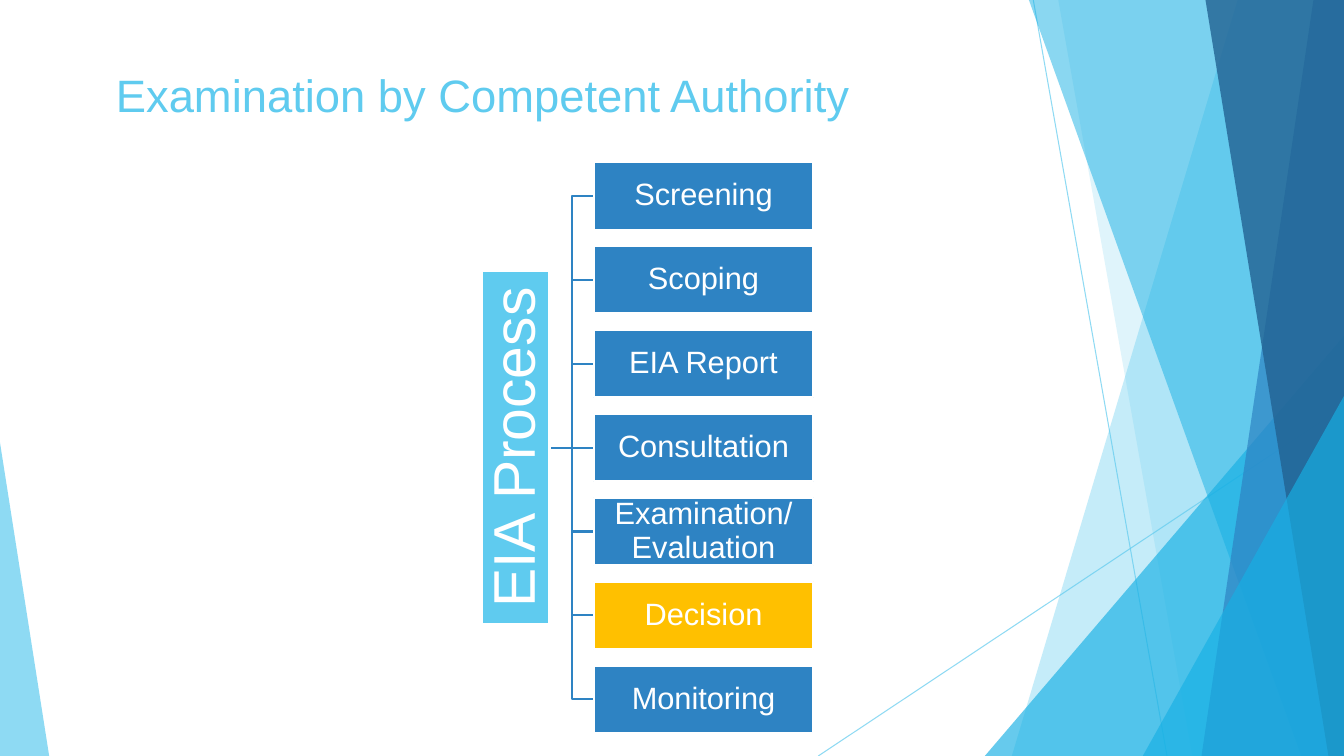
import pptx
import pptx.dml.color
import pptx.enum.shapes
import pptx.enum.text
import pptx.oxml.ns
import pptx.util
from lxml import etree

Cm = pptx.util.Cm
SHAPES = pptx.enum.shapes.MSO_SHAPE
CONNECTORS = pptx.enum.shapes.MSO_CONNECTOR
qn = pptx.oxml.ns.qn

WIDTH, HEIGHT = 33.87, 19.05
SKY, CYAN, BLUE, NAVY = "5FCBEF", "17B0E4", "2E83C3", "226292"
WHITE, AMBER = "FFFFFF", "FFC000"
STEPS = ["Screening", "Scoping", "EIA Report", "Consultation",
         "Examination/ Evaluation", "Decision", "Monitoring"]
CURRENT_STEP = "Decision"


def color(hex_value):
    return pptx.dml.color.RGBColor.from_string(hex_value)


def set_opacity(shape, percent):
    for tint in shape.element.spPr.iter(qn("a:srgbClr")):
        etree.SubElement(tint, qn("a:alpha"), val=str(percent * 1000))


def paint(shape, fill, opacity=100, outline=None):
    shape.shadow.inherit = False
    shape.fill.solid()
    shape.fill.fore_color.rgb = color(fill)
    if outline:
        shape.line.color.rgb = color(outline)
        shape.line.width = pptx.util.Pt(1.5)
    else:
        shape.line.fill.background()
    if opacity < 100:
        set_opacity(shape, opacity)


def write(frame, text, size, tint=WHITE, align="CENTER", anchor="MIDDLE",
          spacing=0.9, insets=(0.05, 0.05, 0.05, 0.05)):
    frame.word_wrap = True
    frame.auto_size = pptx.enum.text.MSO_AUTO_SIZE.NONE
    frame.vertical_anchor = pptx.enum.text.MSO_ANCHOR[anchor]
    (frame.margin_left, frame.margin_top,
     frame.margin_right, frame.margin_bottom) = [Cm(inset) for inset in insets]
    para = frame.paragraphs[0]
    para.alignment = pptx.enum.text.PP_ALIGN[align]
    para.line_spacing = spacing
    span = para.add_run()
    span.text = text
    span.font.name = "Arial"
    span.font.size = pptx.util.Pt(size)
    span.font.color.rgb = color(tint)


def add_link(page, kind, start, end, tint, weight):
    link = page.shapes.add_connector(
        kind, *[Cm(length) for length in (*start, *end)])
    link.line.color.rgb = color(tint)
    link.line.width = pptx.util.Pt(weight)
    etree.SubElement(link.element.spPr, qn("a:effectLst"))
    return link


def add_box(page, left, top, width, height, fill):
    box = page.shapes.add_shape(
        SHAPES.RECTANGLE, Cm(left), Cm(top), Cm(width), Cm(height))
    paint(box, fill, outline=WHITE)
    return box


def add_facet(page, left, top, width, height, top_edge, bottom_edge, fill, opacity):
    right, bottom = left + width, top + height
    outline = page.shapes.build_freeform(Cm(left + top_edge), Cm(top))
    outline.add_line_segments(
        [(Cm(x), Cm(y)) for x, y in
         [(right, top), (right, bottom), (left + bottom_edge, bottom)]])
    paint(outline.convert_to_shape(), fill, opacity)


def add_triangle(page, left, top, width, height, apex, fill, opacity):
    triangle = page.shapes.add_shape(
        SHAPES.ISOSCELES_TRIANGLE, Cm(left), Cm(top), Cm(width), Cm(height))
    triangle.adjustments[0] = apex
    paint(triangle, fill, opacity)


def add_backdrop(page, left, top, width, height):
    right, bottom = left + width, top + height
    for start, end in [((left + 26.04, top), (left + 29.41, bottom)),
                       ((right, top + 10.24), (left + 20.62, bottom))]:
        ray = add_link(page, CONNECTORS.STRAIGHT, start, end, SKY, 0.75)
        set_opacity(ray, 70)

    def facets(*rows):
        for row in rows:
            add_facet(page, left, top, width, height, *row)

    def corner(across, down, apex, fill, opacity):
        add_triangle(page, right - across, bottom - down, across, down,
                     apex, fill, opacity)

    facets((31.19, 25.5, SKY, 36), (26.67, 30.05, SKY, 20))
    corner(9.05, 10.59, 1, CYAN, 66)
    facets((25.93, 32.79, CYAN, 50), (33.1, 30.28, BLUE, 70),
           (30.38, 33.48, NAVY, 80))
    corner(5.07, 9.07, 1, CYAN, 66)
    add_triangle(page, left, bottom - 7.9, 1.24, 7.9, 0, SKY, 70)


def add_title(page, left, top, width, height):
    title = page.shapes.title
    title.left, title.top = Cm(left), Cm(top)
    title.width, title.height = Cm(width), Cm(height)
    write(title.text_frame, "Examination by Competent Authority", 32.4, SKY,
          align="LEFT", anchor="TOP", spacing=1, insets=(0.25, 0.2, 0.25, 0))


def add_process(page, left, top, width, height):
    step_width, thickness, root_height = 5.54, 1.7, 8.89
    pitch = (height - thickness) / (len(STEPS) - 1)
    step_left = left + width - step_width
    middle = top + height / 2
    step_tops = [top + index * pitch for index in range(len(STEPS))]

    links = []
    for index, step_top in enumerate(step_tops):
        level = index == len(STEPS) // 2
        kind = CONNECTORS.STRAIGHT if level else CONNECTORS.ELBOW
        links.append(add_link(page, kind, (left + thickness, middle),
                              (step_left, step_top + thickness / 2), BLUE, 1.5))

    root = add_box(page, left, middle - root_height / 2, thickness, root_height, SKY)
    write(root.text_frame, "EIA Process", 42, insets=(0.08,) * 4)
    root.text_frame._txBody.bodyPr.set("vert", "vert270")

    for step, step_top, link in zip(STEPS, step_tops, links):
        fill = AMBER if step == CURRENT_STEP else BLUE
        box = add_box(page, step_left, step_top, step_width, thickness, fill)
        write(box.text_frame, step, 22)
        link.begin_connect(root, 3)
        link.end_connect(box, 1)


def main():
    deck = pptx.Presentation()
    deck.slide_width, deck.slide_height = Cm(WIDTH), Cm(HEIGHT)
    page = deck.slides.add_slide(deck.slide_layouts[5])
    add_backdrop(page, 0, 0, WIDTH, HEIGHT)
    add_title(page, 2.67, 1.5, 23.04, 1.4)
    add_process(page, 12.15, 4.09, 8.35, 14.38)
    deck.save("out.pptx")


if __name__ == "__main__":
    main()
